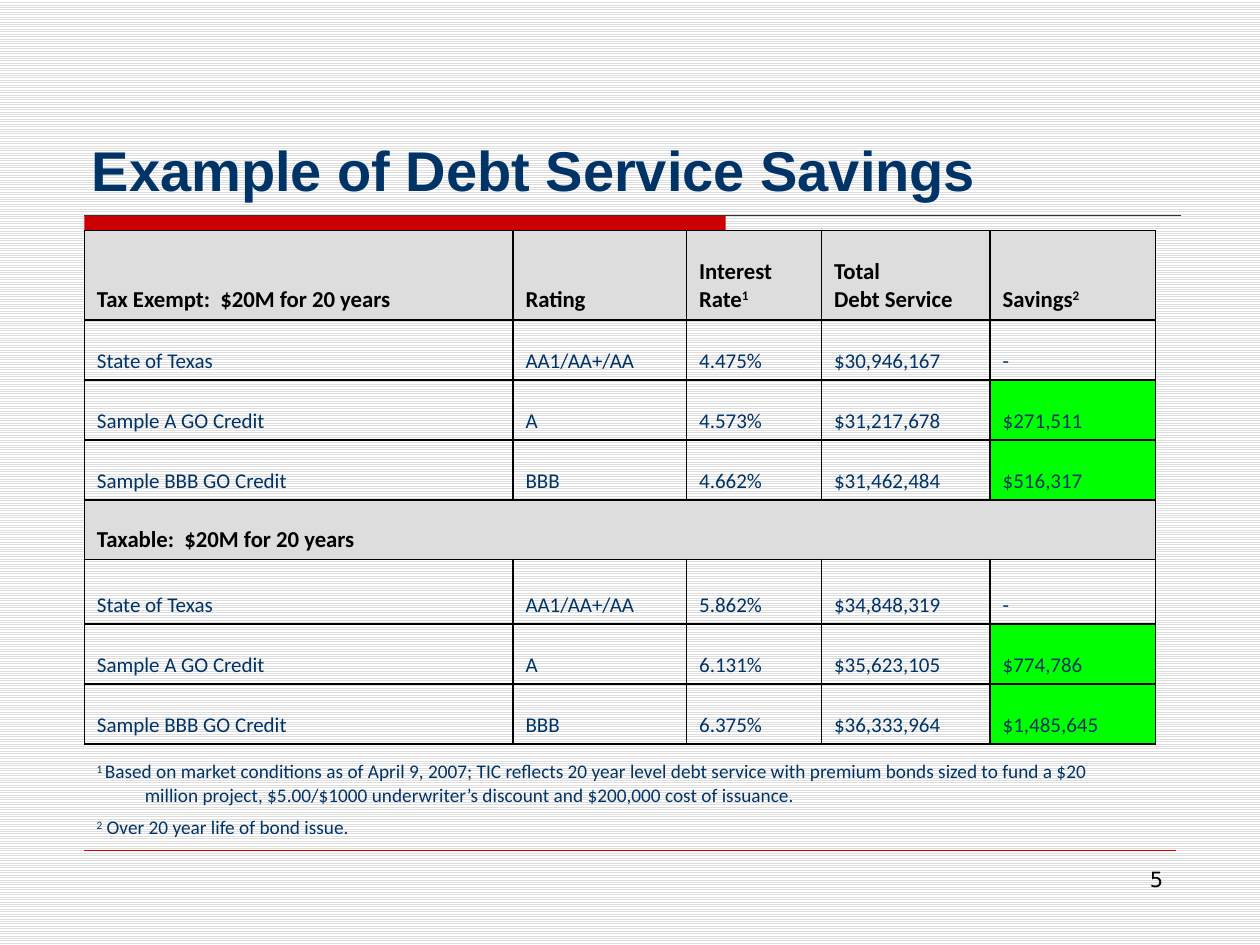
from lxml import etree
from pptx import Presentation
from pptx import util as u
from pptx.dml.color import RGBColor
from pptx.enum import dml, shapes, text
from pptx.oxml.ns import qn

COLORS = {
    "navy": "003366", "red": "CC0000", "black": "000000", "rule": "333333",
    "grey": "DDDDDD", "green": "00FF00", "white": "FFFFFF",
}
COL_WIDTHS = [8.64, 3.5, 2.72, 3.4, 3.33]
ROW_HEIGHTS = [1.8, 1.21, 1.21, 1.21, 1.2, 1.3, 1.21, 1.21]
ROWS = [
    ["Tax Exempt:  $20M for 20 years", "Rating", "Interest\nRate^1^",
     "Total\nDebt Service", "Savings^2^"],
    ["State of Texas", "AA1/AA+/AA", "4.475%", "$30,946,167", "-"],
    ["Sample A GO Credit", "A", "4.573%", "$31,217,678", "$271,511"],
    ["Sample BBB GO Credit", "BBB", "4.662%", "$31,462,484", "$516,317"],
    ["Taxable:  $20M for 20 years"],
    ["State of Texas", "AA1/AA+/AA", "5.862%", "$34,848,319", "-"],
    ["Sample A GO Credit", "A", "6.131%", "$35,623,105", "$774,786"],
    ["Sample BBB GO Credit", "BBB", "6.375%", "$36,333,964", "$1,485,645"],
]
HEADER_ROWS = (0, 4)
NOTES = (
    "^1 ^Based on market conditions as of April 9, 2007; TIC reflects 20 year "
    "level debt service with premium bonds sized to fund a $20 million project, "
    "$5.00/$1000 underwriter’s discount and $200,000 cost of issuance.\n"
    "^2^ Over 20 year life of bond issue."
)


def rgb(name):
    return RGBColor.from_string(COLORS[name])


def write(tf, content, font="Calibri", size=12, color="navy", bold=False,
          align=text.PP_ALIGN.LEFT, anchor=text.MSO_ANCHOR.TOP, hang=0, before=0):
    """Fill a text frame: newlines split paragraphs, ^...^ marks superscript."""
    tf.word_wrap = True
    tf.vertical_anchor = anchor
    for i, line in enumerate(content.split("\n")):
        p = tf.paragraphs[0] if i == 0 else tf.add_paragraph()
        p.alignment = align
        p.space_before = u.Pt(before)
        if hang:
            pPr = p._p.get_or_add_pPr()
            pPr.set("marL", str(u.Cm(hang)))
            pPr.set("indent", str(-u.Cm(hang)))
        for j, part in enumerate(line.split("^")):
            if not part:
                continue
            r = p.add_run()
            r.text = part
            r.font.name, r.font.size, r.font.bold = font, u.Pt(size), bold
            r.font.color.rgb = rgb(color)
            if j % 2:
                r._r.get_or_add_rPr().set("baseline", "30000")


def set_borders(cell, color="black", width=1):
    tcPr = cell._tc.get_or_add_tcPr()
    for i, side in enumerate(("a:lnL", "a:lnR", "a:lnT", "a:lnB")):
        ln = etree.Element(qn(side), w=str(u.Pt(width)))
        fill = etree.SubElement(ln, qn("a:solidFill"))
        etree.SubElement(fill, qn("a:srgbClr"), val=COLORS[color])
        tcPr.insert(i, ln)


class SlideBuilder:
    def __init__(self, s):
        self.s = s

    def background(self, fore, back):
        fill = self.s.background.fill
        fill.patterned()
        fill.pattern = dml.MSO_PATTERN.LIGHT_HORIZONTAL
        fill.fore_color.rgb, fill.back_color.rgb = rgb(fore), rgb(back)

    def bar(self, x, y, w, h, color):
        sp = self.s.shapes.add_shape(shapes.MSO_SHAPE.RECTANGLE,
                                     u.Cm(x), u.Cm(y), u.Cm(w), u.Cm(h))
        sp.shadow.inherit = False
        sp.fill.solid()
        sp.fill.fore_color.rgb = rgb(color)
        sp.line.fill.background()

    def rule(self, x1, x2, y, color, width):
        c = self.s.shapes.add_connector(shapes.MSO_CONNECTOR.STRAIGHT,
                                        u.Cm(x1), u.Cm(y), u.Cm(x2), u.Cm(y))
        c.line.color.rgb = rgb(color)
        c.line.width = u.Pt(width)
        etree.SubElement(c._element.spPr, qn("a:effectLst"))

    def text(self, x, y, w, h, content, **style):
        sp = self.s.shapes.add_textbox(u.Cm(x), u.Cm(y), u.Cm(w), u.Cm(h))
        write(sp.text_frame, content, **style)

    def table(self, x, y):
        frame = self.s.shapes.add_table(len(ROWS), len(COL_WIDTHS), u.Cm(x), u.Cm(y),
                                        u.Cm(sum(COL_WIDTHS)), u.Cm(sum(ROW_HEIGHTS)))
        tbl = frame.table
        tbl.first_row = tbl.horz_banding = False
        for col, width in zip(tbl.columns, COL_WIDTHS):
            col.width = u.Cm(width)
        for i, (row, height) in enumerate(zip(tbl.rows, ROW_HEIGHTS)):
            row.height = u.Cm(height)
            header = i in HEADER_ROWS
            if len(ROWS[i]) == 1:
                tbl.cell(i, 0).merge(tbl.cell(i, len(COL_WIDTHS) - 1))
            style = dict(size=13, color="black", bold=True) if header else {}
            for j, cell in enumerate(row.cells):
                if j < len(ROWS[i]):
                    write(cell.text_frame, ROWS[i][j], hang=1.3, **style)
                cell.vertical_anchor = text.MSO_ANCHOR.BOTTOM
                saving = j == 4 and not header and ROWS[i][j] != "-"
                if header or saving:
                    cell.fill.solid()
                    cell.fill.fore_color.rgb = rgb("grey" if header else "green")
                else:
                    cell.fill.background()
                set_borders(cell)


def main():
    prs = Presentation()
    prs.slide_width, prs.slide_height = u.Cm(25.4), u.Cm(19.05)
    b = SlideBuilder(prs.slides.add_slide(prs.slide_layouts[6]))
    b.background("grey", "white")
    b.bar(1.7, 4.34, 12.93, 0.3, "red")
    b.rule(1.7, 23.8, 4.34, "rule", 0.75)
    b.rule(1.7, 23.7, 17.15, "red", 0.25)
    b.text(18.2, 17.35, 5.5, 1.32, "5", font="DejaVu Sans", color="black",
           align=text.PP_ALIGN.RIGHT)
    b.text(1.6, 0.84, 22.23, 3.38, "Example of Debt Service Savings", font="Arial",
           size=32, bold=True, anchor=text.MSO_ANCHOR.BOTTOM)
    b.table(1.7, 4.65)
    b.text(1.7, 15.19, 20.75, 1.88, NOTES, size=11, hang=0.97, before=5.5)
    prs.save("out.pptx")


if __name__ == "__main__":
    main()
